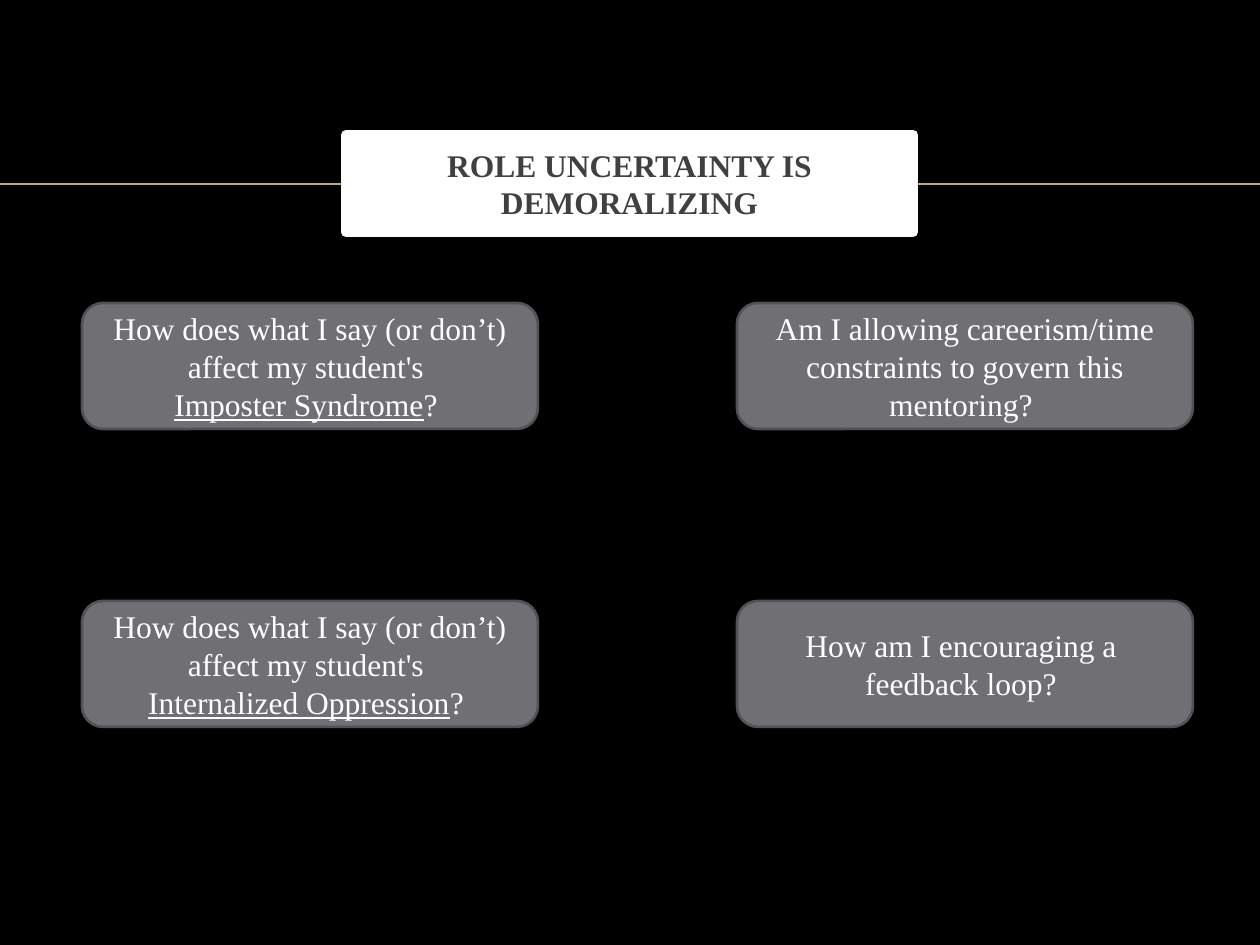
from lxml import etree
from pptx import Presentation
from pptx.dml.color import RGBColor
from pptx.enum.shapes import MSO_CONNECTOR, MSO_SHAPE
from pptx.enum.text import MSO_ANCHOR, PP_ALIGN
from pptx.oxml.ns import qn
from pptx.util import Emu, Pt

STRAIGHT = MSO_CONNECTOR.STRAIGHT
ROUNDED = MSO_SHAPE.ROUNDED_RECTANGLE
MIDDLE = MSO_ANCHOR.MIDDLE
CENTER = PP_ALIGN.CENTER

BLACK = RGBColor(0x00, 0x00, 0x00)
WHITE = RGBColor(0xFF, 0xFF, 0xFF)
TITLE_GRAY = RGBColor(0x40, 0x40, 0x40)
CARD_FILL = RGBColor(0x6F, 0x6F, 0x74)
CARD_BORDER = RGBColor(0x52, 0x52, 0x56)
RULE_TAN = RGBColor(0xBB, 0xAA, 0x8A)

FONT = "Times New Roman"
FONT_SIZE = 18
EMU_PER_PX = 914400 // 126

SLIDE_SIZE = (1260, 945)
RULE_Y = 184
TITLE_BOX = (346, 135, 567, 97)
COLUMNS = (82, 737)
ROWS = (303, 601)
CARD_SIZE = (456, 126)

TITLE = "ROLE UNCERTAINTY IS DEMORALIZING"
EFFECT = "How does what I say (or don’t) affect my student's "

# Rows of cards; a card is a list of paragraphs, a paragraph a list of (text, underlined).
CARDS = [
    [
        [[(EFFECT, False)], [("Imposter Syndrome", True), ("? ", False)]],
        [[("Am I allowing careerism/time constraints to govern this mentoring? ", False)]],
    ],
    [
        [[(EFFECT, False)], [("Internalized Oppression", True), ("? ", False)]],
        [[("How am I encouraging a ", False)], [("feedback loop? ", False)]],
    ],
]


def px(*lengths):
    return [Emu(length * EMU_PER_PX) for length in lengths]


def paint(shape, fill, border, border_width):
    shape.fill.solid()
    shape.fill.fore_color.rgb = fill
    shape.line.color.rgb = border
    shape.line.width = Pt(border_width)


def add_run(paragraph, text, color, bold=False, underline=False):
    run = paragraph.add_run()
    run.text = text
    font = run.font
    font.name, font.size = FONT, Pt(FONT_SIZE)
    font.bold, font.underline = bold, underline
    font.color.rgb = color


def add_rule(slide):
    width = SLIDE_SIZE[0]
    rule = slide.shapes.add_connector(STRAIGHT, *px(0, RULE_Y, width, RULE_Y))
    rule.line.color.rgb = RULE_TAN
    rule.line.width = Pt(1)
    etree.SubElement(rule.element.spPr, qn("a:effectLst"))


def format_title(slide):
    title = slide.shapes.title
    title.left, title.top, title.width, title.height = px(*TITLE_BOX)
    paint(title, WHITE, WHITE, 6)
    frame = title.text_frame
    frame.word_wrap = True
    frame.vertical_anchor = MIDDLE
    paragraph = frame.paragraphs[0]
    paragraph.alignment = CENTER
    paragraph.space_before = Pt(4)
    add_run(paragraph, TITLE, TITLE_GRAY, bold=True)
    # Bring the title in front of the rule.
    slide.shapes.element.append(title.element)


def add_card(slide, left, top, paragraphs):
    card = slide.shapes.add_shape(ROUNDED, *px(left, top, *CARD_SIZE))
    card.shadow.inherit = False
    paint(card, CARD_FILL, CARD_BORDER, 1.5)
    frame = card.text_frame
    frame.word_wrap = True
    frame.vertical_anchor = MIDDLE
    for index, runs in enumerate(paragraphs):
        paragraph = frame.add_paragraph() if index else frame.paragraphs[0]
        paragraph.alignment = CENTER
        for text, underlined in runs:
            add_run(paragraph, text, WHITE, underline=underlined)


def main():
    presentation = Presentation()
    presentation.slide_width, presentation.slide_height = px(*SLIDE_SIZE)
    slide = presentation.slides.add_slide(presentation.slide_layouts[5])
    slide.background.fill.solid()
    slide.background.fill.fore_color.rgb = BLACK

    add_rule(slide)
    format_title(slide)
    for top, row in zip(ROWS, CARDS):
        for left, paragraphs in zip(COLUMNS, row):
            add_card(slide, left, top, paragraphs)

    presentation.save("out.pptx")


if __name__ == "__main__":
    main()
